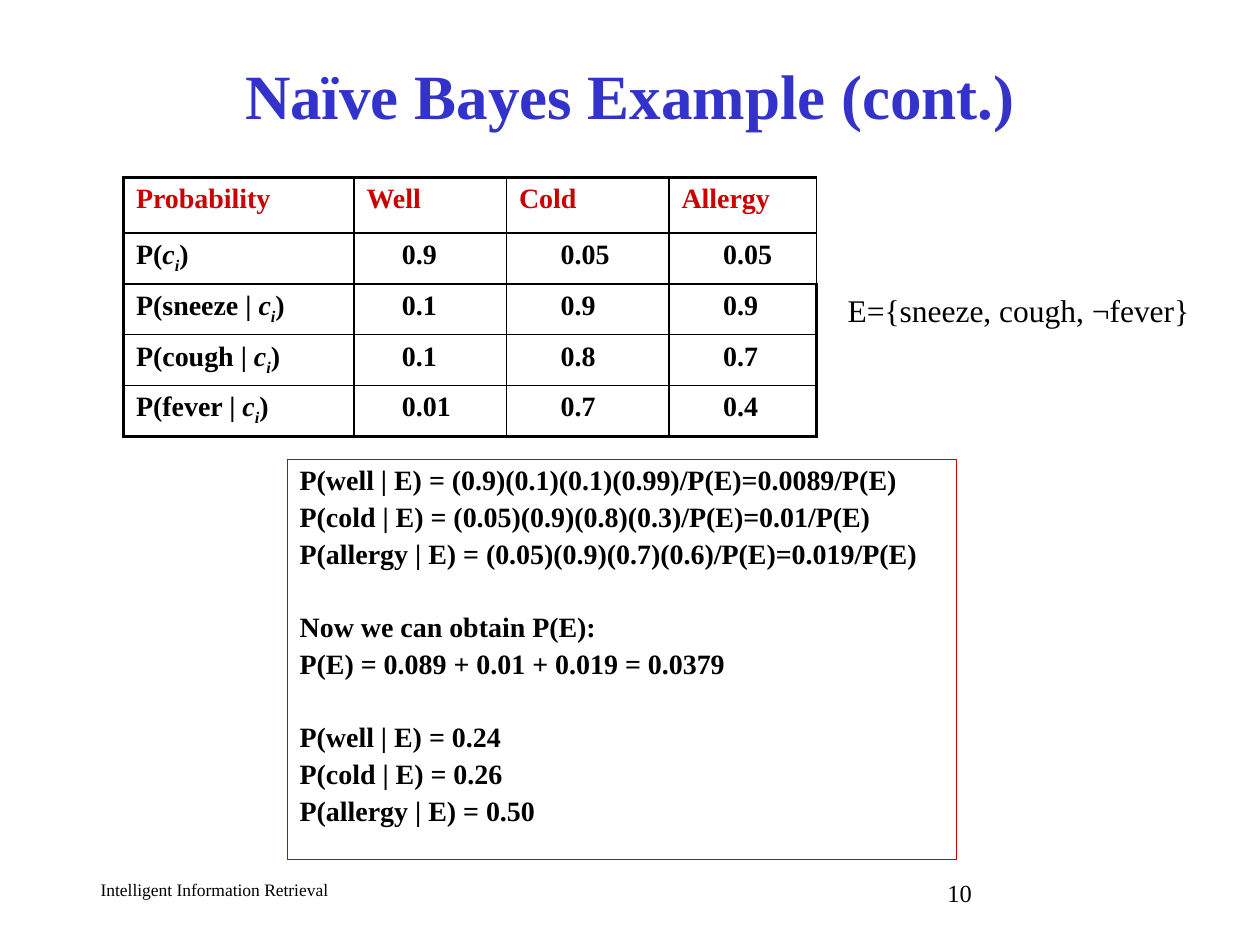
from pptx import Presentation
from pptx.dml.color import RGBColor as RGB
from pptx.enum.shapes import MSO_SHAPE as Shape
from pptx.enum.text import MSO_ANCHOR as Anchor, PP_ALIGN as Align
from pptx.oxml import parse_xml
from pptx.oxml.ns import nsdecls
from pptx.util import Inches, Pt

# Content
TITLE = "Naïve Bayes Example (cont.)"
EVENT = "E={sneeze, cough, ¬fever}"
FOOT, PAGE = "Intelligent Information Retrieval", "10"
HEAD = ["Probability", "Well", "Cold", "Allergy"]
ROWS = [  # label before the subscripted class, then one value per class
    ("P(", "0.9", "0.05", "0.05"),
    ("P(sneeze | ", "0.1", "0.9", "0.9"),
    ("P(cough | ", "0.1", "0.8", "0.7"),
    ("P(fever | ", "0.01", "0.7", "0.4"),
]
STEPS = [  # groups of lines, set apart by one line
    ["P(well | E) = (0.9)(0.1)(0.1)(0.99)/P(E)=0.0089/P(E)",
     "P(cold | E) = (0.05)(0.9)(0.8)(0.3)/P(E)=0.01/P(E)",
     "P(allergy | E) = (0.05)(0.9)(0.7)(0.6)/P(E)=0.019/P(E)"],
    ["Now we can obtain P(E):",
     "P(E) = 0.089 + 0.01 + 0.019 = 0.0379"],
    ["P(well | E) = 0.24",
     "P(cold | E) = 0.26",
     "P(allergy | E) = 0.50"],
]

# Look
FONT = "Times New Roman"
BLACK, BLUE, RED = RGB(0, 0, 0), RGB(0x33, 0x33, 0xCC), RGB(0xCC, 0, 0)
THIN, THICK = 1, 2.25
COLS = [1.83, 1.21, 1.29, 1.17]
HIGH = [0.44, 0.38, 0.38, 0.38, 0.39]
PADS = [0.1, 0.38, 0.43, 0.43]  # left margin of the values, by column
GAP, LINE = 3.9, 20.5           # points between lines, and per line

prs = Presentation()
prs.slide_width, prs.slide_height = Inches(10), Inches(7.5)
slide = prs.slides.add_slide(prs.slide_layouts[6])


def style(run, size, color=BLACK, bold=False):
    font = run.font
    font.name, font.size, font.bold = FONT, Pt(size), bold
    font.color.rgb = color


def label(text, box, size, color=BLACK, bold=False, align=Align.LEFT, wrap=True):
    frame = slide.shapes.add_textbox(*map(Inches, box)).text_frame
    frame.word_wrap = wrap
    para = frame.paragraphs[0]
    para.text, para.alignment = text, align
    style(para.runs[0], size, color, bold)
    return frame


def edge(cell, side, width):
    cell._tc.get_or_add_tcPr().append(parse_xml(
        f'<a:ln{side} {nsdecls("a")} w="{int(Pt(width))}"><a:solidFill>'
        f'<a:srgbClr val="{BLACK}"/></a:solidFill></a:ln{side}>'))


# Title, event and footer
label(TITLE, (0.75, 0.33, 8.5, 0.83), 36, BLUE, True,
      Align.CENTER).vertical_anchor = Anchor.MIDDLE
label(EVENT, (6.61, 2.26, 2.95, 0.4), 18, align=Align.CENTER, wrap=False)
label(FOOT, (0.7, 6.93, 3.75, 0.25), 10)
label(PAGE, (7.42, 6.92, 2.08, 0.25), 14)

# Probability table
grid = slide.shapes.add_table(
    len(HIGH), len(COLS), Inches(0.98), Inches(1.41),
    Inches(sum(COLS)), Inches(sum(HIGH))).table
grid.first_row = grid.horz_banding = False
for col, width in zip(grid.columns, COLS):
    col.width = Inches(width)
for row, height in zip(grid.rows, HIGH):
    row.height = Inches(height)

last_r, last_c = len(HIGH) - 1, len(COLS) - 1
for r, texts in enumerate([HEAD, *ROWS]):
    for c, text in enumerate(texts):
        cell = grid.cell(r, c)
        para = cell.text_frame.paragraphs[0]
        para.text = text
        if r and c == 0:
            for part in ("c", "i", ")"):
                para.add_run().text = part
        for run in para.runs:
            style(run, 16, BLACK if r else RED, True)
        if r and c == 0:
            name, sub = para.runs[1:3]
            name.font.italic = sub.font.italic = True
            sub.font._element.set("baseline", "-25000")
        cell.margin_left = Inches(PADS[c] if r else PADS[0])
        # Heavy frame, but the right side only from the third row down
        heavy = {"L": c == 0, "R": c == last_c and r > 1,
                 "T": r == 0, "B": r == last_r}
        for side, on in heavy.items():
            edge(cell, side, THICK if on else THIN)
        cell.fill.background()

# Worked steps
box = slide.shapes.add_shape(
    Shape.RECTANGLE, *map(Inches, (2.28, 3.65, 5.31, 3.17)))
box.shadow.inherit = False
box.fill.background()
box.line.color.rgb, box.line.width = RED, Pt(0.75)
frame = box.text_frame
frame.word_wrap, frame.vertical_anchor = True, Anchor.TOP
frame.text = "\n".join(line for group in STEPS for line in group)
starts = {len(STEPS[0]), len(STEPS[0]) + len(STEPS[1])}
for n, para in enumerate(frame.paragraphs):
    para.alignment, para.line_spacing = Align.LEFT, 0.9
    para.space_before = Pt(GAP + LINE if n in starts else GAP)
    props = para._p.get_or_add_pPr()
    props.set("marL", str(Inches(0.38)))
    props.set("indent", str(-Inches(0.38)))
    style(para.runs[0], 16, bold=True)

prs.save("out.pptx")
